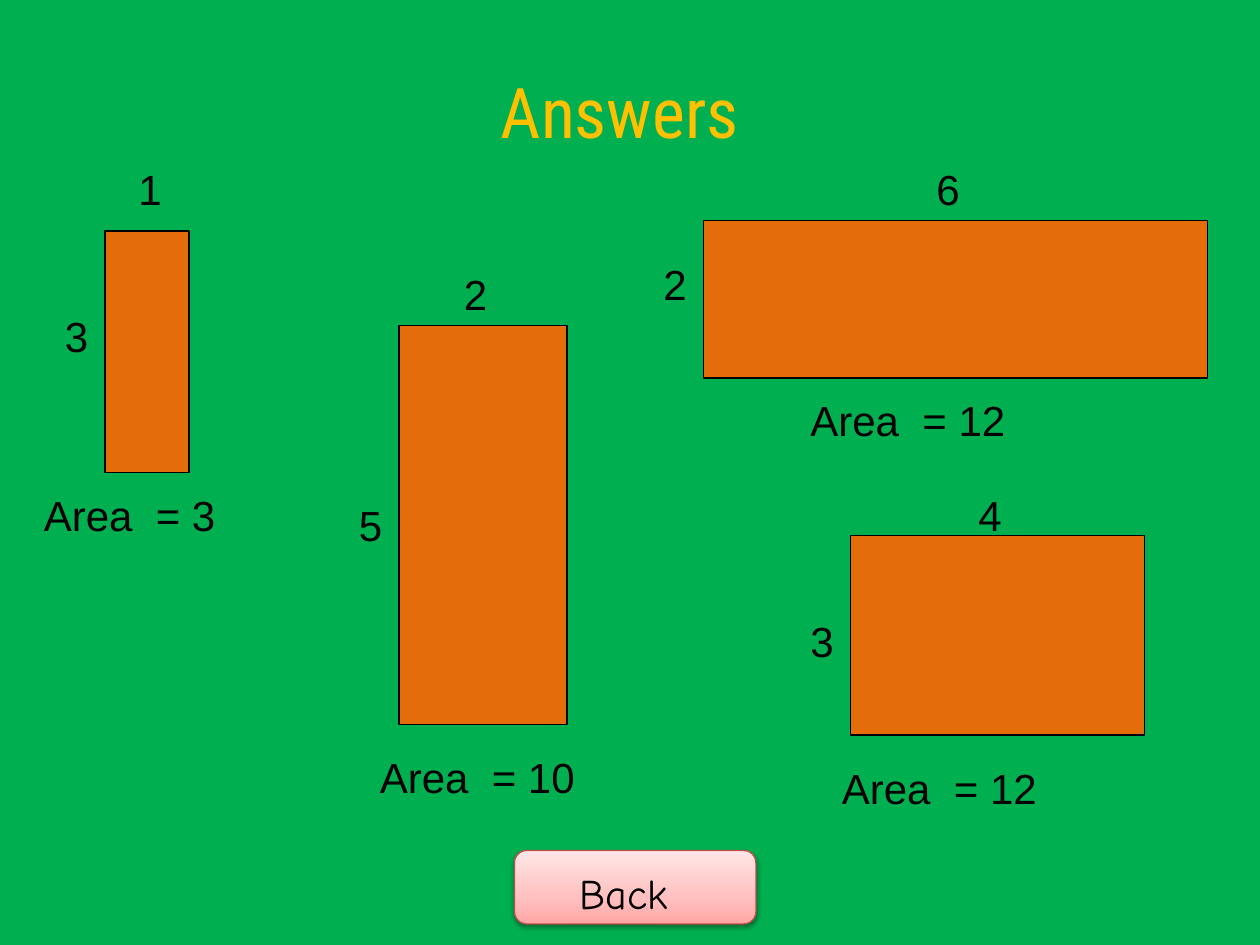
from copy import deepcopy
from lxml import etree
from pptx import Presentation
from pptx.dml.color import RGBColor
from pptx.enum.shapes import MSO_SHAPE as SHAPE
from pptx.enum.text import MSO_ANCHOR as ANCHOR, PP_ALIGN as ALIGN
from pptx.oxml.ns import qn
from pptx.util import Pt

GREEN = RGBColor(0x00, 0xB0, 0x50)
ORANGE = RGBColor(0xE4, 0x6C, 0x0A)
GOLD = RGBColor(0xFF, 0xC0, 0x00)
BLACK = RGBColor(0x00, 0x00, 0x00)
RED = RGBColor(0xBF, 0x4C, 0x48)
PINKS = [(0, RGBColor(0xFF, 0xA6, 0xA5)),
         (0.35, RGBColor(0xFF, 0xC0, 0xBF)),
         (1, RGBColor(0xFF, 0xE7, 0xE7))]


def add_text(shapes, text, x, y, w, h=36, wrap=True, font="Arial", size=24, color=BLACK):
    sp = shapes.add_textbox(Pt(x), Pt(y), Pt(w), Pt(h))
    tf = sp.text_frame
    tf.word_wrap = wrap
    r = tf.paragraphs[0].add_run()
    r.text = text
    r.font.name = font
    r.font.size = Pt(size)
    r.font.color.rgb = color
    return tf


def add_box(shapes, kind, x, y, w, h, line):
    sp = shapes.add_shape(kind, Pt(x), Pt(y), Pt(w), Pt(h))
    sp.shadow.inherit = False
    sp.line.color.rgb = line
    sp.line.width = Pt(0.75)
    return sp


prs = Presentation()
prs.slide_width, prs.slide_height = Pt(720), Pt(540)
s = prs.slides.add_slide(prs.slide_layouts[6])

sp = add_box(s.shapes, SHAPE.RECTANGLE, 0, 0, 720, 540, GREEN)
sp.fill.solid()
sp.fill.fore_color.rgb = GREEN
sp.line.fill.background()

# x, y, w, h, width label, its x and y, height label, its y
rectangles = [
    (60, 132, 48, 138, "1", 72, 90, "3", 174),
    (486, 306, 168, 114, "4", 552, 276, "3", 348),
    (228, 186, 96, 228, "2", 258, 150, "5", 282),
    (402, 126, 288, 90, "6", 528, 90, "2", 144),
]
for x, y, w, h, across, across_x, across_y, down, down_y in rectangles:
    grp = s.shapes.add_group_shape()
    sp = add_box(grp.shapes, SHAPE.RECTANGLE, x, y, w, h, BLACK)
    sp.fill.solid()
    sp.fill.fore_color.rgb = ORANGE
    add_text(grp.shapes, across, across_x, across_y, 28, wrap=False)
    add_text(grp.shapes, down, x - 30, down_y, 28, wrap=False)

for area, x, y in [(3, 18, 276), (10, 210, 426), (12, 456, 222), (12, 474, 432)]:
    add_text(s.shapes, f"Area  = {area}", x, y, 186)

tf = add_text(s.shapes, "Answers", 126, 18, 456, 90, font="Roboto Condensed", size=40, color=GOLD)
tf.vertical_anchor = ANCHOR.MIDDLE
tf.paragraphs[0].alignment = ALIGN.CENTER

grp = s.shapes.add_group_shape()
button = add_box(grp.shapes, SHAPE.ROUNDED_RECTANGLE, 294, 486, 138, 42, RED)
button.fill.gradient()
button.fill.gradient_angle = 90
stops = button.element.spPr.find(qn("a:gradFill")).find(qn("a:gsLst"))
stops.append(deepcopy(stops[-1]))
for stop, (position, color) in zip(button.fill.gradient_stops, PINKS):
    stop.position = position
    stop.color.rgb = color
effects = button.element.spPr.find(qn("a:effectLst"))
shadow = etree.SubElement(effects, qn("a:outerShdw"), blurRad=str(Pt(3.1)),
                          dist=str(Pt(1.6)), dir="5400000", rotWithShape="0")
tint = etree.SubElement(shadow, qn("a:srgbClr"), val=str(BLACK))
etree.SubElement(tint, qn("a:alpha"), val="38000")
add_text(grp.shapes, "Back", 324, 492, 96, font="Comic Neue")

prs.save("out.pptx")
